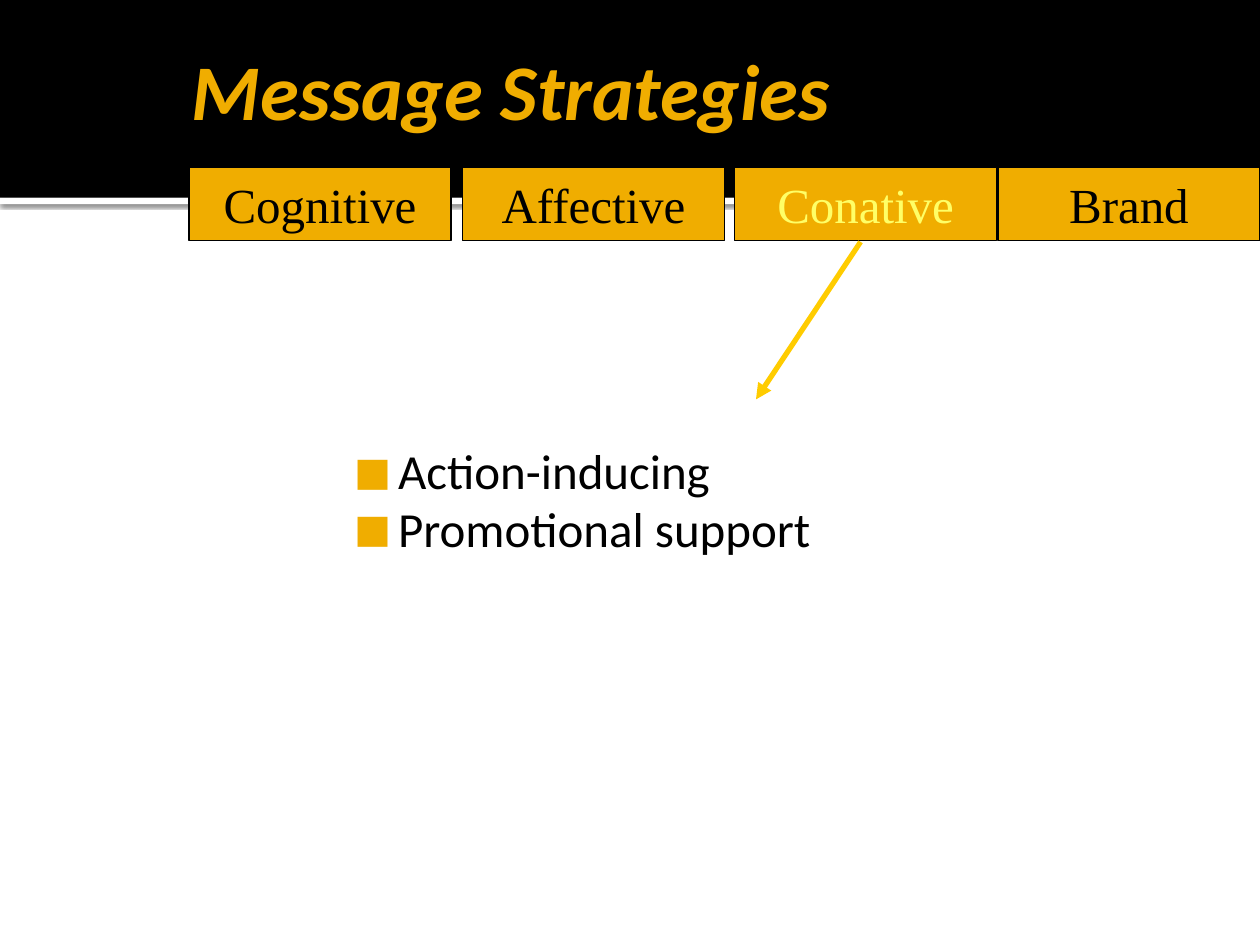
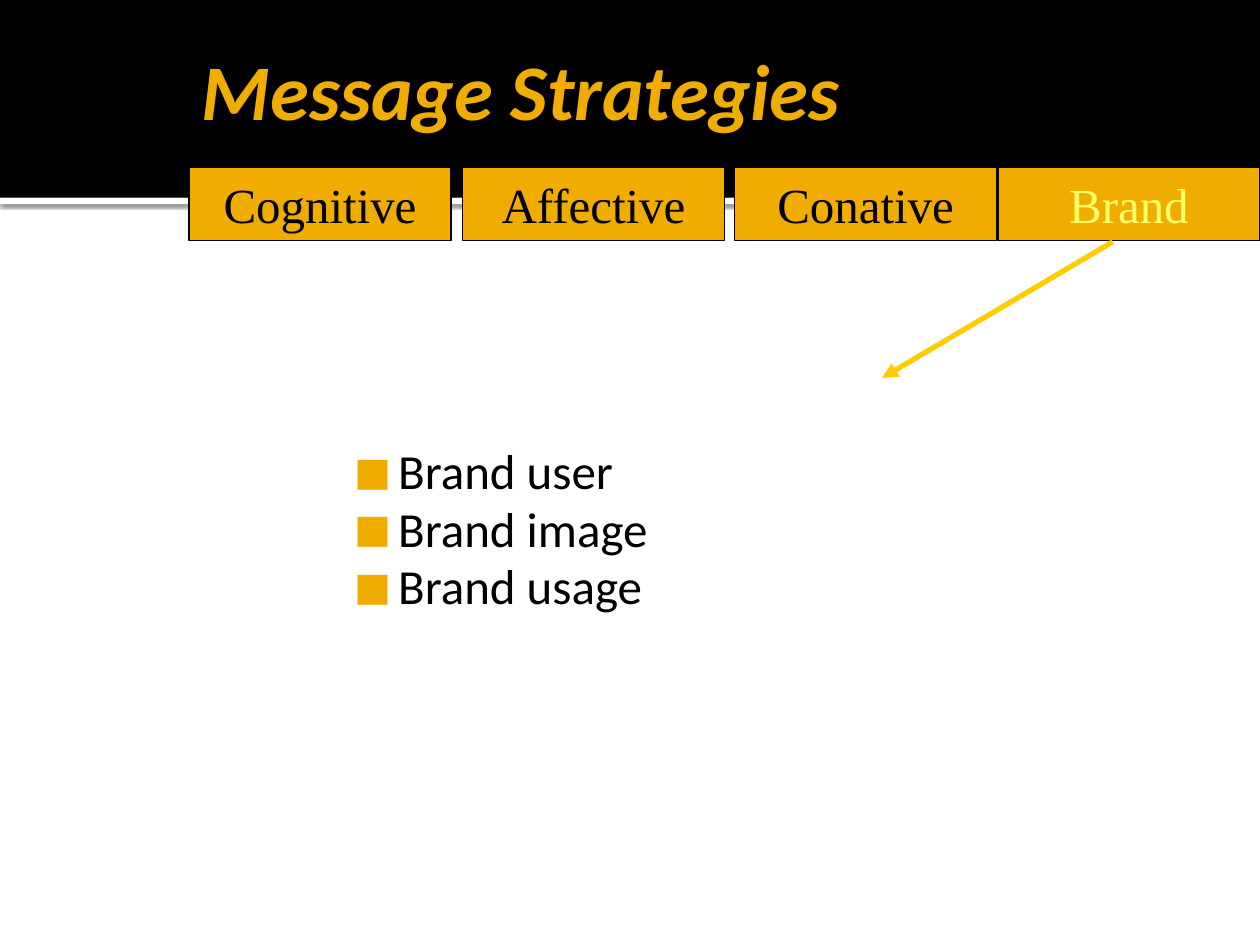
from lxml import etree
from pptx import Presentation
from pptx.dml.color import RGBColor
from pptx.enum.shapes import MSO_CONNECTOR, MSO_SHAPE
from pptx.enum.text import MSO_ANCHOR, MSO_AUTO_SIZE, PP_ALIGN
from pptx.oxml import parse_xml
from pptx.oxml.ns import nsdecls, qn
from pptx.util import Inches, Pt

BLACK = RGBColor(0x00, 0x00, 0x00)
WHITE = RGBColor(0xFF, 0xFF, 0xFF)
AMBER = RGBColor(0xF0, 0xAD, 0x00)
ARROW_YELLOW = RGBColor(0xFF, 0xCC, 0x00)
HIGHLIGHT = RGBColor(0xFF, 0xFF, 0x66)
SANS, SERIF = "Calibri", "Times New Roman"

TITLE = "Message Strategies"
TABS = [("Cognitive", 1.5), ("Affective", 3.67), ("Conative", 5.83), ("Brand", 7.92)]
TAB_TOP, TAB_WIDTH, TAB_HEIGHT = 1.33, 2.08, 0.58
BAND_HEIGHT, RULE_HEIGHT = 1.57, 0.05
BODY_AREA = (2.58, 3.42, 5.17, 3.25)

PAGES = [
    {
        "active": "Conative",
        "title_area": (1.42, 0.25, 8.5, 0.92),
        "points": ["Action-inducing", "Promotional support"],
        "arrow": ((6.83, 1.92), (6, 3.17)),
    },
    {
        "active": "Brand",
        "title_area": (1.5, 0.17, 8.5, 1.08),
        "points": ["Brand user", "Brand image", "Brand usage"],
        "arrow": ((8.83, 1.92), (7, 3)),
    },
]


def place(shape, area):
    shape.left, shape.top, shape.width, shape.height = map(Inches, area)


def set_insets(frame, left, top, right, bottom):
    frame.margin_left, frame.margin_top = Inches(left), Inches(top)
    frame.margin_right, frame.margin_bottom = Inches(right), Inches(bottom)


def add_span(para, text, font, size, color):
    span = para.add_run()
    span.text = text
    span.font.name = font
    span.font.size = Pt(size)
    span.font.color.rgb = color
    return span


def add_box(page, area, fill):
    box = page.shapes.add_shape(MSO_SHAPE.RECTANGLE, *map(Inches, area))
    box.shadow.inherit = False
    box.fill.solid()
    box.fill.fore_color.rgb = fill
    box.line.fill.background()
    return box


def add_bands(page, layout):
    """Draw the header band and its rule, then move them behind the layout."""
    rule = add_box(page, (0, BAND_HEIGHT, 10, RULE_HEIGHT), WHITE)
    effects = rule._element.spPr.find(qn("a:effectLst"))
    effects.append(parse_xml(
        f'<a:outerShdw {nsdecls("a")} blurRad="{Pt(2.5)}" dist="{Pt(0.8)}" '
        'dir="5400000" algn="t" rotWithShape="0">'
        '<a:srgbClr val="000000"><a:alpha val="60000"/></a:srgbClr></a:outerShdw>'))
    band = add_box(page, (0, 0, 10, BAND_HEIGHT), BLACK)
    for position, shape in enumerate((rule, band), start=2):
        layout.shapes._spTree.insert(position, shape._element)


def fill_title(page, area):
    title = page.shapes.title
    place(title, area)
    frame = title.text_frame
    frame.auto_size = MSO_AUTO_SIZE.NONE
    frame.vertical_anchor = MSO_ANCHOR.MIDDLE
    set_insets(frame, 0.1, 0.05, 0.05, 0.05)
    para = frame.paragraphs[0]
    para.alignment = PP_ALIGN.LEFT
    span = add_span(para, TITLE, SANS, 45, AMBER)
    span.font.bold = span.font.italic = True


def add_bullet(para):
    props = para._p.get_or_add_pPr()
    props.set("marL", str(Inches(0.48)))
    props.set("indent", str(Inches(-0.35)))
    color = etree.SubElement(props, qn("a:buClr"))
    etree.SubElement(color, qn("a:srgbClr"), val=str(AMBER))
    etree.SubElement(props, qn("a:buSzPct"), val="80000")
    etree.SubElement(props, qn("a:buFont"), typeface=SANS)
    etree.SubElement(props, qn("a:buChar"), char="■")


def fill_body(page, points):
    body = page.placeholders[1]
    place(body, BODY_AREA)
    frame = body.text_frame
    frame.auto_size = MSO_AUTO_SIZE.NONE
    set_insets(frame, 0.1, 0.1, 0.1, 0.05)
    for index, point in enumerate(points):
        para = frame.add_paragraph() if index else frame.paragraphs[0]
        para.line_spacing = 0.98
        para.space_before = Pt(0)
        add_bullet(para)
        add_span(para, point, SANS, 28, BLACK)


def add_tabs(page, active):
    for name, left in TABS:
        tab = add_box(page, (left, TAB_TOP, TAB_WIDTH, TAB_HEIGHT), AMBER)
        tab.line.color.rgb = BLACK
        tab.line.width = Pt(1)
        frame = tab.text_frame
        frame.word_wrap = False
        frame.vertical_anchor = MSO_ANCHOR.MIDDLE
        para = frame.paragraphs[0]
        para.alignment = PP_ALIGN.CENTER
        add_span(para, name, SERIF, 28, HIGHLIGHT if name == active else BLACK)


def add_arrow(page, start, end):
    arrow = page.shapes.add_connector(
        MSO_CONNECTOR.STRAIGHT, *map(Inches, start + end))
    arrow.line.color.rgb = ARROW_YELLOW
    arrow.line.width = Pt(3)
    etree.SubElement(arrow.line._get_or_add_ln(), qn("a:tailEnd"), type="triangle")
    etree.SubElement(arrow._element.spPr, qn("a:effectLst"))


def main():
    deck = Presentation()
    deck.slide_width, deck.slide_height = Inches(10), Inches(7.5)
    layout = deck.slide_layouts[1]
    for number, content in enumerate(PAGES):
        page = deck.slides.add_slide(layout)
        if number == 0:
            add_bands(page, layout)
        fill_title(page, content["title_area"])
        fill_body(page, content["points"])
        add_tabs(page, content["active"])
        add_arrow(page, *content["arrow"])
    deck.save("out.pptx")


if __name__ == "__main__":
    main()
